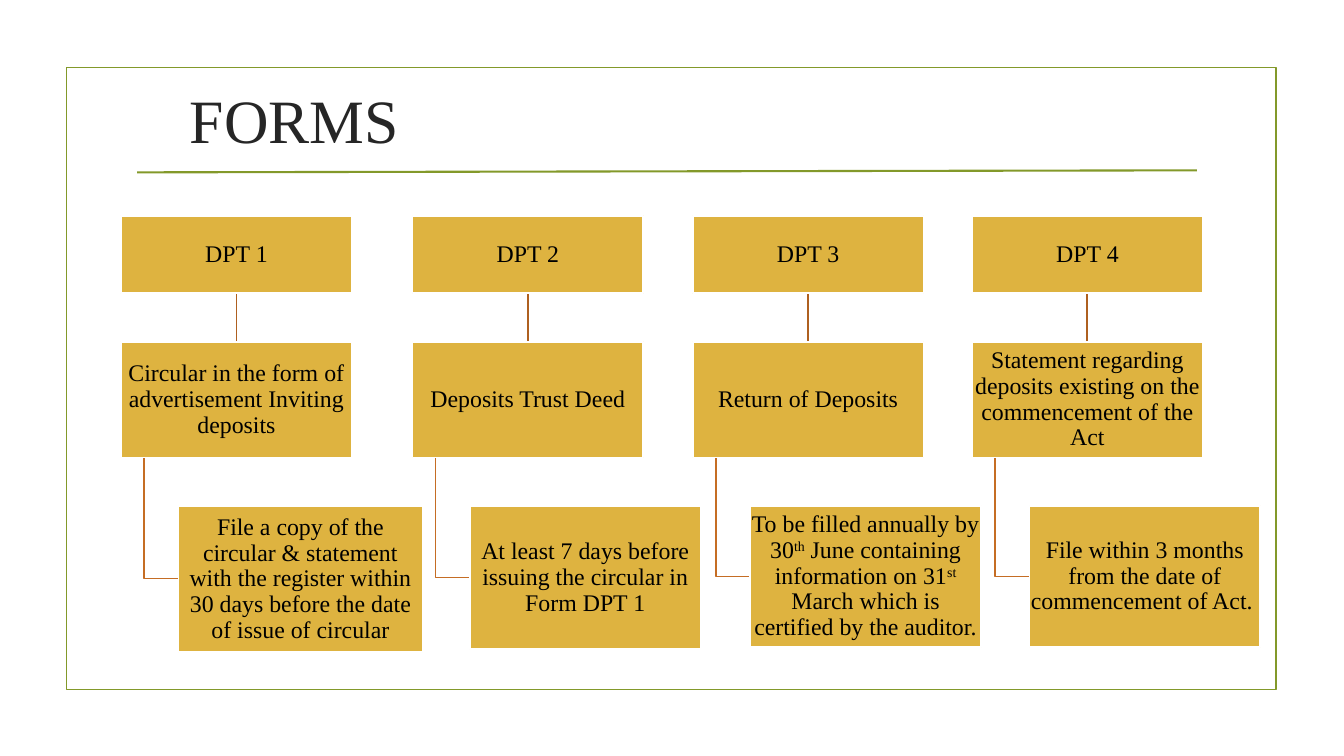
from lxml import etree
from pptx import Presentation
from pptx.dml.color import RGBColor
from pptx.enum.shapes import MSO_CONNECTOR, MSO_SHAPE
from pptx.enum.text import MSO_ANCHOR, PP_ALIGN
from pptx.oxml.ns import qn
from pptx.util import Emu, Pt

TITLE = "FORMS"
# Runs at odd positions of a detail text are superscript.
FORMS = [
    dict(left=120, name="DPT 1", purpose="Circular in the form of advertisement Inviting deposits",
         detail=["File a copy of the circular & statement with the register within "
                 "30 days before the date of issue of circular"],
         detail_size=(242, 145)),
    dict(left=409, name="DPT 2", purpose="Deposits Trust Deed",
         detail=["At least 7 days before issuing the circular in Form DPT 1"],
         detail_size=(229, 142)),
    dict(left=687, name="DPT 3", purpose="Return of Deposits",
         detail=["To be filled annually by 30", "th", " June containing information on 31",
                 "st", " March which is certified by the auditor."],
         detail_size=(229, 140)),
    dict(left=964, name="DPT 4",
         purpose="Statement regarding deposits existing on the commencement of the Act",
         detail=["File within 3 months from the date of commencement of Act. "],
         detail_size=(229, 140)),
]
COLORS = dict(green="83992A", gold="DEB340", white="FFFFFF", black="000000",
              title="262626", stem="AE6020", elbow="C56D24")
FONT = "Times New Roman"
PX = 9144  # 100 px to the inch
BOX_WIDTH = 229
NAME_TOP, NAME_HEIGHT = 214, 77
PURPOSE_TOP, PURPOSE_HEIGHT = 339, 115
DETAIL_TOP, DETAIL_INDENT, ELBOW_INDENT = 502, 57, 23


def px(*lengths):
    return [Emu(round(length * PX)) for length in lengths]


def color(name):
    return RGBColor.from_string(COLORS[name])


def set_line(shape, name, width=1.25):
    shape.line.color.rgb = color(name)
    shape.line.width = Pt(width)


def style_font(font, size, name):
    font.name = FONT
    font.size = Pt(size)
    font.color.rgb = color(name)


def add_line(slide, start, end, name, width=1.25):
    connector = slide.shapes.add_connector(MSO_CONNECTOR.STRAIGHT, *px(*start, *end))
    set_line(connector, name, width)
    etree.SubElement(connector._element.spPr, qn("a:effectLst"))
    return connector


def add_elbow(slide, left, top, right, bottom):
    builder = slide.shapes.build_freeform(left, top, scale=PX)
    builder.add_line_segments([(left, bottom), (right, bottom)], close=False)
    elbow = builder.convert_to_shape()
    elbow.fill.background()
    elbow.shadow.inherit = False
    set_line(elbow, "elbow")


def add_box(slide, left, top, width, height, texts):
    box = slide.shapes.add_shape(MSO_SHAPE.RECTANGLE, *px(left, top, width, height))
    box.shadow.inherit = False
    box.fill.solid()
    box.fill.fore_color.rgb = color("gold")
    set_line(box, "white")
    frame = box.text_frame
    frame.word_wrap = True
    frame.vertical_anchor = MSO_ANCHOR.MIDDLE
    frame.margin_left = frame.margin_right = frame.margin_top = frame.margin_bottom = Emu(PX)
    paragraph = frame.paragraphs[0]
    paragraph.alignment = PP_ALIGN.CENTER
    paragraph.line_spacing = 0.9
    for index, text in enumerate(texts):
        run = paragraph.add_run()
        run.text = text
        style_font(run.font, 17, "black")
        if index % 2:
            run.font._element.set("baseline", "30000")
    return box


def add_form(slide, form):
    left = form["left"]
    center = left + BOX_WIDTH / 2
    detail_left = left + DETAIL_INDENT
    detail_width, detail_height = form["detail_size"]
    add_elbow(slide, left + ELBOW_INDENT, PURPOSE_TOP + PURPOSE_HEIGHT,
              detail_left, DETAIL_TOP + detail_height / 2)
    stem = add_line(slide, (center, NAME_TOP + NAME_HEIGHT), (center, PURPOSE_TOP), "stem")
    name_box = add_box(slide, left, NAME_TOP, BOX_WIDTH, NAME_HEIGHT, [form["name"]])
    purpose_box = add_box(slide, left, PURPOSE_TOP, BOX_WIDTH, PURPOSE_HEIGHT, [form["purpose"]])
    add_box(slide, detail_left, DETAIL_TOP, detail_width, detail_height, form["detail"])
    stem.begin_connect(name_box, 2)
    stem.end_connect(purpose_box, 0)


def main():
    presentation = Presentation()
    presentation.slide_width, presentation.slide_height = px(1333, 750)
    slide = presentation.slides.add_slide(presentation.slide_layouts[5])

    border = slide.shapes.add_shape(MSO_SHAPE.RECTANGLE, *px(66, 67, 1200, 617))
    border.fill.background()
    border.shadow.inherit = False
    set_line(border, "green")

    title = slide.shapes.title
    title.left, title.top, title.width, title.height = px(0, 65, 584, 106)
    title.text_frame.text = TITLE
    title.text_frame.vertical_anchor = MSO_ANCHOR.MIDDLE
    paragraph = title.text_frame.paragraphs[0]
    paragraph.alignment = PP_ALIGN.CENTER
    style_font(paragraph.runs[0].font, 44, "title")

    for form in FORMS:
        add_form(slide, form)
    add_line(slide, (136, 171), (1187, 169), "green", 1.5)
    presentation.save("out.pptx")


if __name__ == "__main__":
    main()
